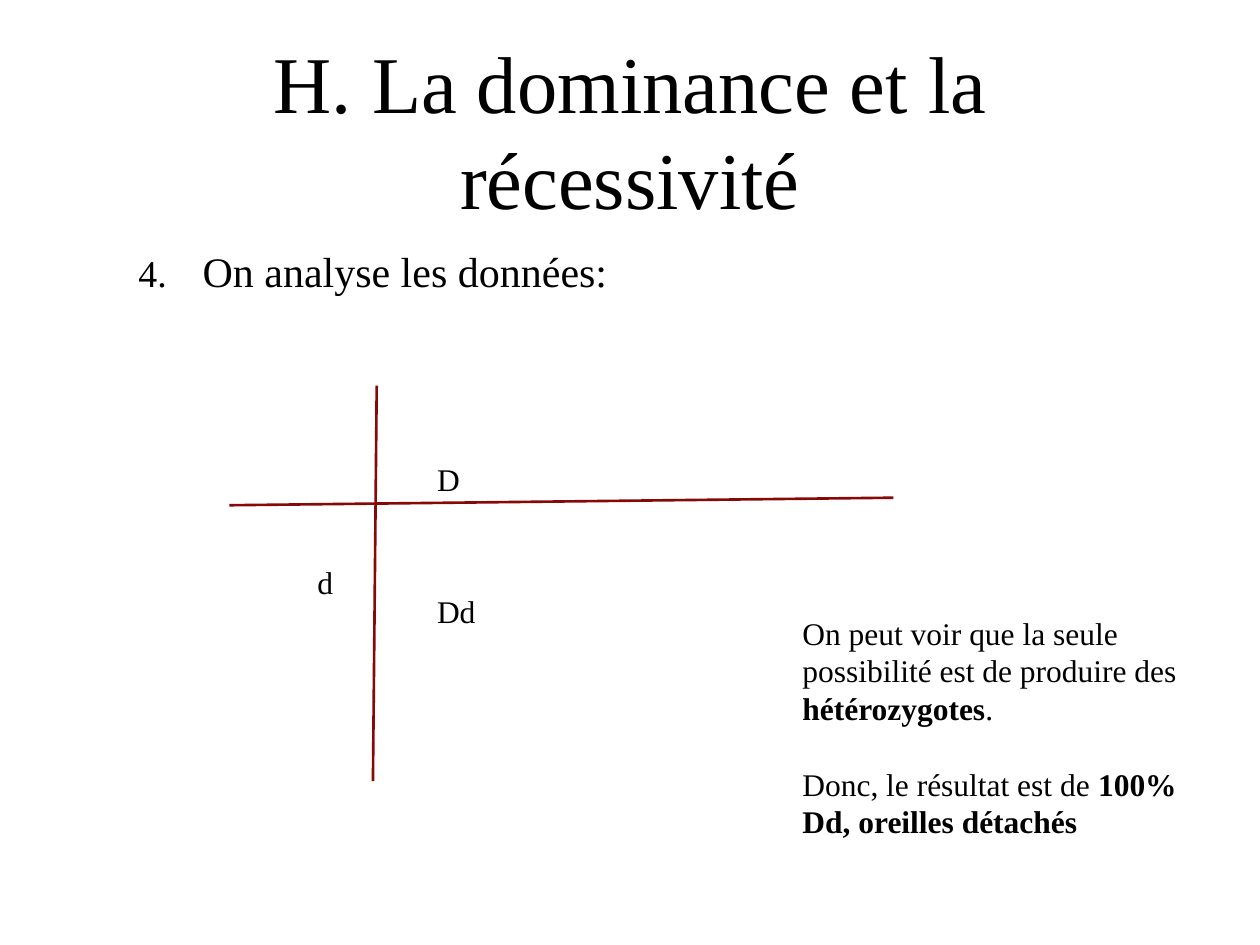
from lxml.etree import SubElement
from pptx import Presentation
from pptx.dml.color import RGBColor
from pptx.enum.shapes import MSO_CONNECTOR
from pptx.enum.text import MSO_ANCHOR, MSO_AUTO_SIZE, PP_ALIGN
from pptx.oxml.ns import qn
from pptx.util import Inches, Pt

COLORS = {"text": "000000", "grid": "860908", "background": "FFFFFF"}
FONT = "Times New Roman"


def add_text_box(slide, box, wrap=True, grow=False):
    """Add an empty text box and return its text frame."""
    frame = slide.shapes.add_textbox(*map(Inches, box)).text_frame
    frame.word_wrap = wrap
    frame.auto_size = MSO_AUTO_SIZE.SHAPE_TO_FIT_TEXT if grow else MSO_AUTO_SIZE.NONE
    return frame


def add_run(paragraph, text, size, bold=False):
    """Append a styled run to a paragraph."""
    run = paragraph.add_run()
    run.text = text
    run.font.name = FONT
    run.font.size = Pt(size)
    run.font.bold = bold
    run.font.color.rgb = RGBColor.from_string(COLORS["text"])


def add_title(slide, box, text):
    """Place the centred slide title."""
    frame = add_text_box(slide, box)
    frame.vertical_anchor = MSO_ANCHOR.MIDDLE
    paragraph = frame.paragraphs[0]
    paragraph.alignment = PP_ALIGN.CENTER
    add_run(paragraph, text, 46)


def add_numbered_step(slide, box, text, number):
    """Place a step with automatic numbering and a hanging indent."""
    paragraph = add_text_box(slide, box).paragraphs[0]
    properties = paragraph._p.get_or_add_pPr()
    indent = Inches(0.51)
    properties.set("marL", str(indent))
    properties.set("indent", str(-indent))
    SubElement(properties, qn("a:buSzPct"), val="90000")
    SubElement(properties, qn("a:buFont"), typeface=FONT)
    SubElement(properties, qn("a:buAutoNum"), type="arabicPeriod", startAt=str(number))
    add_run(paragraph, text, 24)


def add_grid_line(slide, start, end):
    """Draw one dark red line of the Punnett square."""
    line = slide.shapes.add_connector(
        MSO_CONNECTOR.STRAIGHT, *map(Inches, (*start, *end)))
    line.line.color.rgb = RGBColor.from_string(COLORS["grid"])
    line.line.width = Pt(1.5)
    SubElement(line._element.spPr, qn("a:effectLst"))


def add_punnett_square(slide, box):
    """Place the crossed lines and the allele labels within the box."""
    left, top, width, height = box
    add_grid_line(slide, (left + 1.17, top), (left + 1.14, top + height))
    add_grid_line(slide, (left, top + 0.95), (left + width, top + 0.89))
    labels = (("D", 1.55, 0.54, 0.39), ("d", 0.6, 1.36, 0.33), ("Dd", 1.55, 1.59, 0.52))
    for text, across, down, label_width in labels:
        frame = add_text_box(
            slide, (left + across, top + down, label_width, 0.4), wrap=False, grow=True)
        add_run(frame.paragraphs[0], text, 18)


def add_conclusion(slide, box, paragraphs):
    """Place the conclusion, separating its paragraphs by one line."""
    frame = add_text_box(slide, box, grow=True)
    for index, runs in enumerate(paragraphs):
        paragraph = frame.add_paragraph() if index else frame.paragraphs[0]
        if index:
            paragraph.space_before = Pt(21.5)
        for text, bold in runs:
            add_run(paragraph, text, 18, bold)


def main():
    """Build and save the slide."""
    presentation = Presentation()
    presentation.slide_width = Inches(10)
    presentation.slide_height = Inches(7.5)
    slide = presentation.slides.add_slide(presentation.slide_layouts[6])
    slide.background.fill.solid()
    slide.background.fill.fore_color.rgb = RGBColor.from_string(COLORS["background"])
    add_numbered_step(slide, (1, 1.9, 8, 4.44), "On analyse les données:", 4)
    add_title(slide, (1, 0.55, 8, 0.95), "H. La dominance et la récessivité")
    add_punnett_square(slide, (1.82, 3.06, 5.27, 3.14))
    add_conclusion(slide, (6.27, 4.82, 3.26, 1.92), (
        (("On peut voir que la seule possibilité est de produire des ", False),
         ("hétérozygotes", True), (".", False)),
        (("Donc, le résultat est de ", False), ("100% Dd, oreilles détachés", True)),
    ))
    presentation.save("out.pptx")


if __name__ == "__main__":
    main()
